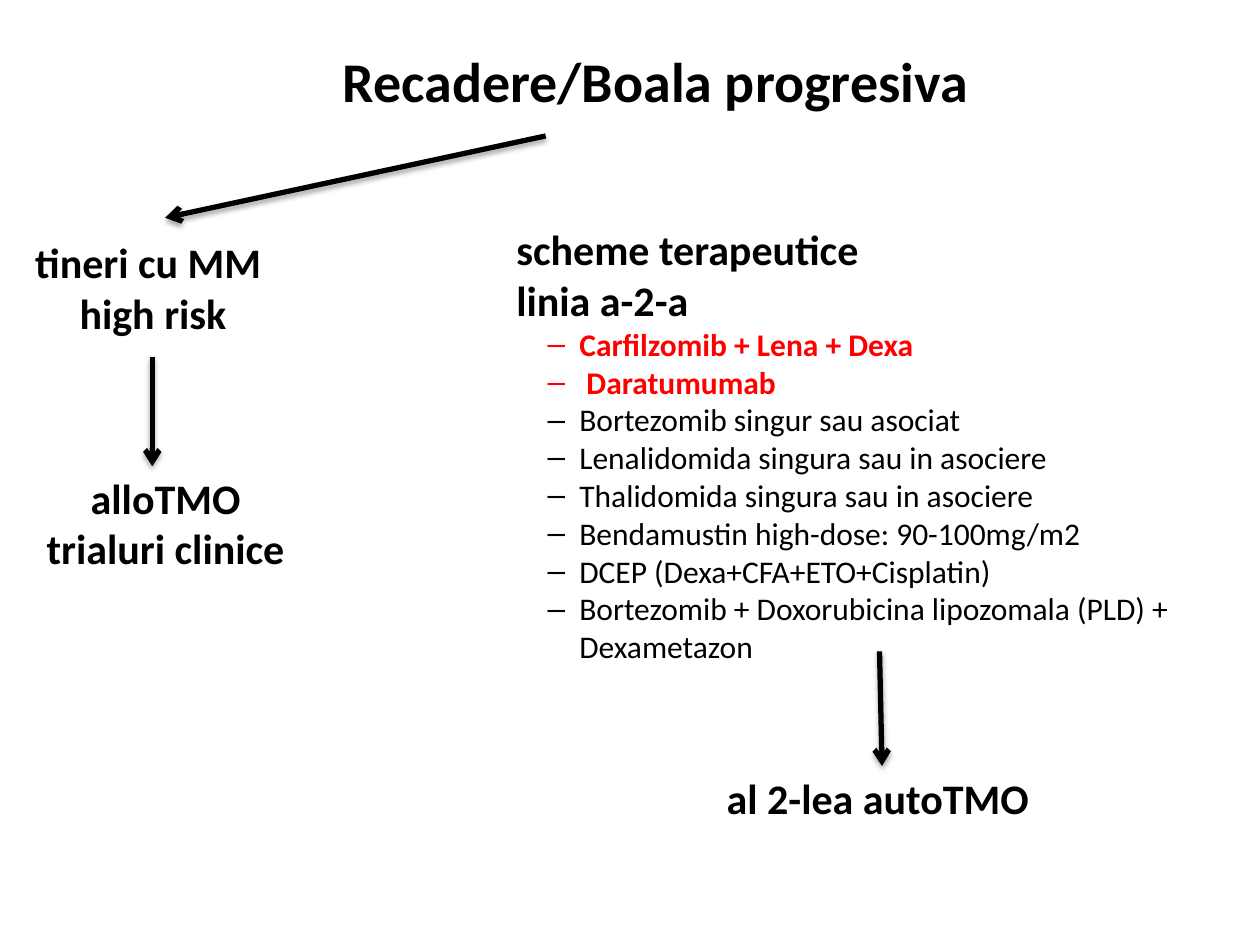
from lxml import etree
from pptx import Presentation
from pptx.dml.color import RGBColor
from pptx.enum.shapes import MSO_CONNECTOR as Connector
from pptx.enum.text import MSO_ANCHOR as Anchor, MSO_AUTO_SIZE as AutoSize, PP_ALIGN as Align
from pptx.oxml import parse_xml
from pptx.oxml.ns import nsdecls, qn
from pptx.util import Cm, Pt

COLORS = {"text": "000000", "new": "FF0000", "line": "000000"}
TITLE = {"size": Pt(32), "bold": True}
HEADING = {"size": Pt(24), "bold": True}
NEW_DRUG = {"size": Pt(18), "bold": True}
DRUG = {"size": Pt(18), "bold": False}

SHADOW = f"""<a:effectLst {nsdecls("a")}>
  <a:outerShdw blurRad="{Pt(3.1)}" dist="{Pt(1.8)}" dir="5400000" rotWithShape="0">
    <a:srgbClr val="{COLORS["line"]}"><a:alpha val="35000"/></a:srgbClr>
  </a:outerShdw>
</a:effectLst>"""


class SlideBuilder:
    """Holds the style and the current slide."""

    font = "Calibri"
    line_width = Pt(3)

    def __init__(self, deck):
        self.page = deck.slides.add_slide(deck.slide_layouts[5])

    def set_frame(self, box, wrap):
        frame = box.text_frame
        formats = {"word_wrap": wrap, "auto_size": AutoSize.NONE, "vertical_anchor": Anchor.TOP}
        for name, value in formats.items():
            setattr(frame, name, value)
        return frame

    def add_span(self, para, text, formats, color="text", align=Align.LEFT):
        para.alignment = align
        span = para.add_run()
        span.text = text
        for name, value in {"name": self.font, **formats}.items():
            setattr(span.font, name, value)
        span.font.color.rgb = RGBColor.from_string(COLORS[color])

    def title(self, text, left, top, width, height):
        box = self.page.shapes.title
        place = {"left": left, "top": top, "width": width, "height": height}
        for name, value in place.items():
            setattr(box, name, Cm(value))
        frame = self.set_frame(box, False)
        self.add_span(frame.paragraphs[0], text, TITLE)

    def text(self, lines, left, top, width, height, align=Align.LEFT, wrap=False):
        box = self.page.shapes.add_textbox(Cm(left), Cm(top), Cm(width), Cm(height))
        frame = self.set_frame(box, wrap)
        for index, line in enumerate(lines):
            para = frame.add_paragraph() if index else frame.paragraphs[0]
            self.add_span(para, line, HEADING, align=align)
        return frame

    def bullets(self, frame, items, formats, color):
        for item in items:
            para = frame.add_paragraph()
            para.level = 1
            self.add_span(para, item, formats, color)
            props = para._p.get_or_add_pPr()
            props.set("marL", str(Cm(1.27)))
            props.set("indent", str(-Cm(0.64)))
            etree.SubElement(props, qn("a:buFont"), typeface="Arial")
            etree.SubElement(props, qn("a:buChar"), char="–")

    def arrow(self, *points):
        link = self.page.shapes.add_connector(Connector.STRAIGHT, *map(Cm, points))
        link.line.width = self.line_width
        link.line.color.rgb = RGBColor.from_string(COLORS["line"])
        etree.SubElement(link.line._get_or_add_ln(), qn("a:tailEnd"), type="arrow")
        link._element.spPr.append(parse_xml(SHADOW))


def main():
    deck = Presentation()
    deck.slide_width, deck.slide_height = Cm(25.4), Cm(19.05)
    slide = SlideBuilder(deck)

    slide.title("Recadere/Boala progresiva", 6.65, 0.81, 13.23, 1.63)

    # Young high-risk patients
    slide.text(["tineri cu MM ", "high risk"], 0.43, 4.65, 5.31, 3.07, Align.CENTER)

    # Second-line regimens
    schemes = slide.text(["scheme terapeutice", "linia a-2-a"],
                         10.16, 4.39, 15.04, 10.77, wrap=True)
    slide.bullets(schemes, ["Carfilzomib + Lena + Dexa", " Daratumumab"], NEW_DRUG, "new")
    slide.bullets(schemes, [
        "Bortezomib singur sau asociat",
        "Lenalidomida singura sau in asociere",
        "Thalidomida singura sau in asociere",
        "Bendamustin high-dose: 90-100mg/m2",
        "DCEP (Dexa+CFA+ETO+Cisplatin)",
        "Bortezomib + Doxorubicina lipozomala (PLD) + Dexametazon",
    ], DRUG, "text")

    # Outcomes
    slide.text(["al 2-lea autoTMO"], 14.4, 15.44, 6.65, 1.27)
    slide.text(["alloTMO", "trialuri clinice"], 0.66, 9.4, 5.36, 2.31, Align.CENTER)

    # Arrows between the steps
    slide.arrow(11, 2.74, 3.33, 4.39)
    slide.arrow(3.07, 7.19, 3.07, 9.4)
    slide.arrow(17.73, 13.13, 17.78, 15.44)

    deck.save("out.pptx")


if __name__ == "__main__":
    main()
